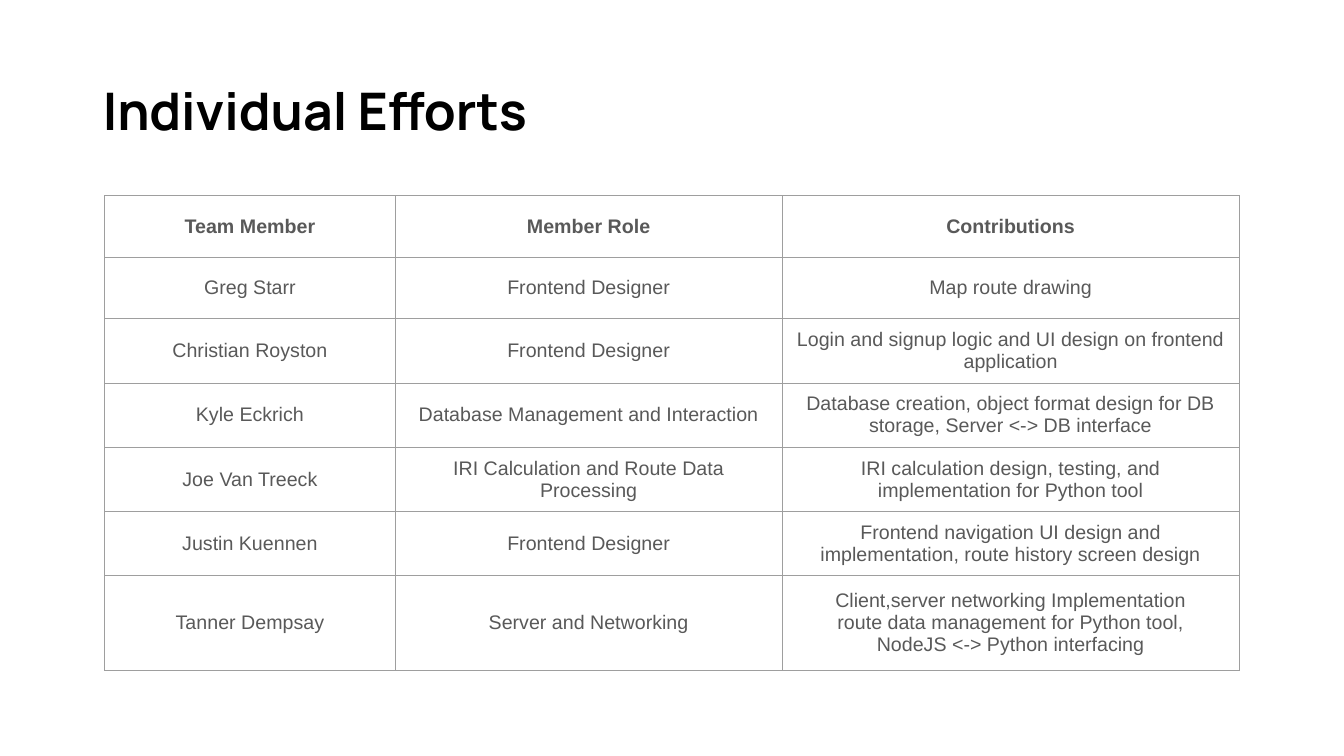
from lxml import etree
from pptx import Presentation
from pptx.dml.color import RGBColor
from pptx.enum.text import MSO_ANCHOR, MSO_AUTO_SIZE, PP_ALIGN
from pptx.oxml.ns import qn
from pptx.util import Inches, Pt

BLACK = RGBColor(0x00, 0x00, 0x00)
GREY = RGBColor(0x59, 0x59, 0x59)
RULE = RGBColor(0x9E, 0x9E, 0x9E)
MIDDLE = MSO_ANCHOR.MIDDLE
CENTER = PP_ALIGN.CENTER
NO_FIT = MSO_AUTO_SIZE.NONE
SIDES = ("a:lnL", "a:lnR", "a:lnT", "a:lnB")

WIDTHS = (21.6, 28.8, 34)
HEIGHTS = (8.15,) * 4 + (8.25,) * 2 + (12.5,)
TEAM = (
    ("Team Member", "Member Role", "Contributions"),
    ("Greg Starr", "Frontend Designer", "Map route drawing"),
    ("Christian Royston", "Frontend Designer",
     "Login and signup logic and UI design on frontend application"),
    ("Kyle Eckrich", "Database Management and Interaction",
     "Database creation, object format design for DB storage, Server <-> DB interface"),
    ("Joe Van Treeck", "IRI Calculation and Route Data Processing",
     "IRI calculation design, testing, and implementation for Python tool"),
    ("Justin Kuennen", "Frontend Designer",
     "Frontend navigation UI design and implementation, route history screen design"),
    ("Tanner Dempsay", "Server and Networking",
     "Client,server networking Implementation\n"
     "route data management for Python tool,\n"
     "NodeJS <-> Python interfacing"),
)


class Deck:
    head = "Manrope"
    body = "Arial"

    def __init__(self):
        self.file = Presentation()
        self.file.slide_width = Inches(13.33)
        self.file.slide_height = Inches(7.5)
        self.slide = self.file.slides.add_slide(self.file.slide_layouts[5])

    def col(self, share):
        return round(self.file.slide_width * share / 100)

    def row(self, share):
        return round(self.file.slide_height * share / 100)

    def style(self, para, face, size, color, bold):
        font = para.font
        font.name, font.size, font.bold = face, Pt(size), bold
        font.color.rgb = color

    def title(self, text, x, y, w, h):
        box = self.slide.shapes.title
        box.left, box.top = self.col(x), self.row(y)
        box.width, box.height = self.col(w), self.row(h)
        frame = box.text_frame
        frame.text = text
        frame.auto_size = NO_FIT
        frame.vertical_anchor = MIDDLE
        para = frame.paragraphs[0]
        para.alignment = PP_ALIGN.LEFT
        para.line_spacing = 0.9
        self.style(para, self.head, 37, BLACK, True)

    def border(self, cell):
        props = cell._tc.get_or_add_tcPr()
        for spot, side in enumerate(SIDES):
            line = etree.Element(qn(side), w=str(Pt(0.75)))
            fill = etree.SubElement(line, qn("a:solidFill"))
            etree.SubElement(fill, qn("a:srgbClr"), val=str(RULE))
            props.insert(spot, line)

    def cell(self, cell, text, bold):
        cell.text = text
        cell.fill.background()
        cell.vertical_anchor = MIDDLE
        cell.margin_left = cell.margin_right = Inches(0.1)
        cell.margin_top = cell.margin_bottom = Inches(0.1)
        for para in cell.text_frame.paragraphs:
            para.alignment = CENTER
            self.style(para, self.body, 14, GREY, bold)
        self.border(cell)

    def table(self, data, x, y, widths, heights):
        table = self.slide.shapes.add_table(
            len(data), len(widths), self.col(x), self.row(y),
            self.col(sum(widths)), self.row(sum(heights))).table
        table.first_row = table.horz_banding = False
        for col, width in zip(table.columns, widths):
            col.width = self.col(width)
        for row, height in zip(table.rows, heights):
            row.height = self.row(height)
        for r, texts in enumerate(data):
            for c, text in enumerate(texts):
                self.cell(table.cell(r, c), text, r == 0)


def main():
    deck = Deck()
    deck.title("Individual Efforts", 6.9, 5.33, 86.27, 19.33)
    deck.table(TEAM, 7.8, 25.87, WIDTHS, HEIGHTS)
    deck.file.save("out.pptx")


if __name__ == "__main__":
    main()
